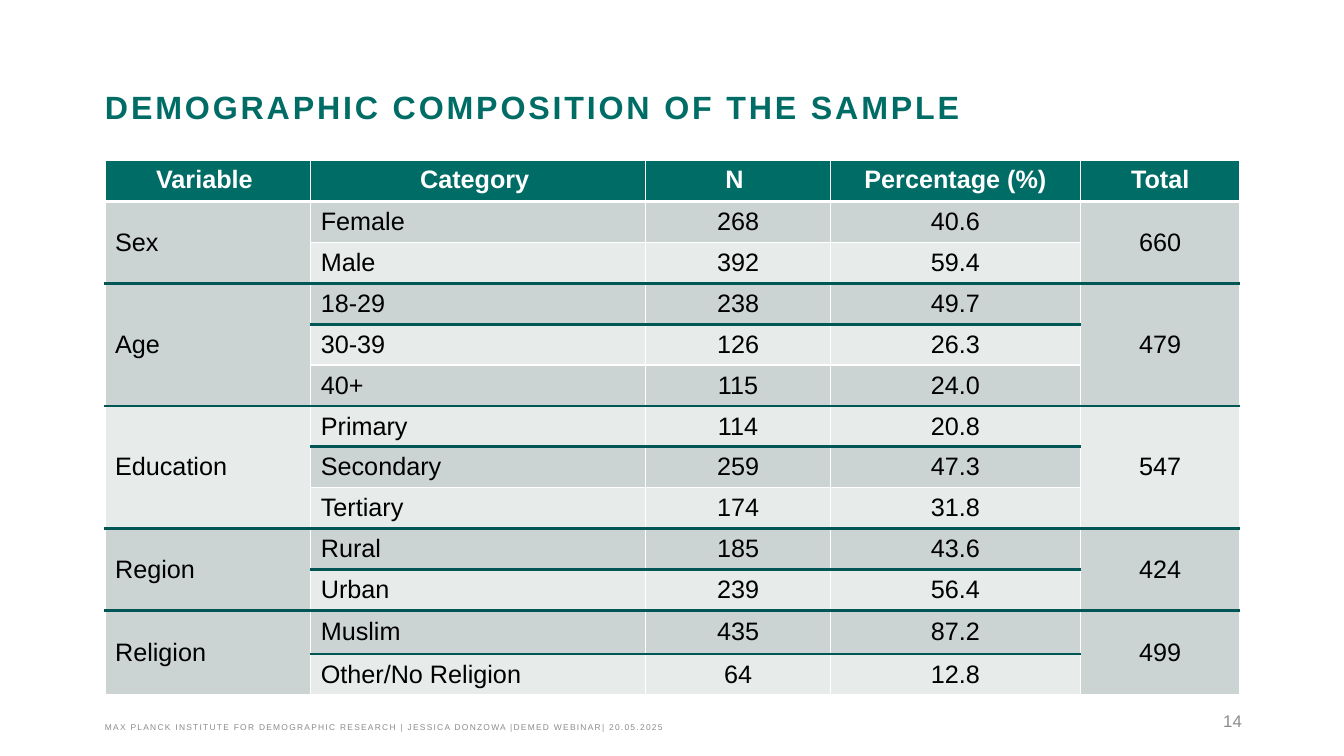
from dataclasses import dataclass

from lxml.etree import SubElement
from pptx import Presentation
from pptx.dml.color import RGBColor
from pptx.enum.text import MSO_ANCHOR as Anchor, PP_ALIGN as Align
from pptx.oxml.ns import qn
from pptx.slide import Slide
from pptx.table import Table, _Cell as Cell
from pptx.text.text import TextFrame
from pptx.util import Pt

GREEN = RGBColor(0x00, 0x6C, 0x66)
RULE_GREEN = RGBColor(0x00, 0x55, 0x55)
DARK_BAND = RGBColor(0xCC, 0xD4, 0xD3)
LIGHT_BAND = RGBColor(0xE7, 0xEB, 0xEA)
GREY = RGBColor(0x8C, 0x8C, 0x8C)
WHITE = RGBColor(0xFF, 0xFF, 0xFF)
BLACK = RGBColor(0x00, 0x00, 0x00)

LEFT, WIDTH = 75, 810.7
TABLE_TOP = 114.75
COLUMN_WIDTHS = (147, 239.2, 132, 178.7, 113.8)
ROW_HEIGHTS = (29.2,) * 11 + (31.2, 29.2)


@dataclass(frozen=True)
class Style:
    size: float
    color: RGBColor
    bold: bool = False
    spacing: float = 0
    align: Align = Align.LEFT


@dataclass(frozen=True)
class Border:
    color: RGBColor
    width: float


@dataclass(frozen=True)
class Variable:
    name: str
    categories: tuple[tuple[str, str, str], ...]
    total: str
    first_rule: bool = True


THIN = Border(WHITE, 1)
HEADER_RULE = Border(WHITE, 3)
GROUP_RULE = Border(RULE_GREEN, 2.25)

TITLE = Style(23, GREEN, bold=True, spacing=2)
HEADER = Style(18, WHITE, bold=True, align=Align.CENTER)
LABEL = Style(18, BLACK)
NUMBER = Style(18, BLACK, align=Align.CENTER)
FOOTER = Style(6, GREY, spacing=0.9)
PAGE = Style(12, GREY, align=Align.RIGHT)

HEADINGS = ("Variable ", "Category ", "N ", "Percentage (%)", "Total")
VARIABLES = (
    Variable("Sex", (("Female", "268", "40.6"), ("Male", "392", "59.4")), "660", first_rule=False),
    Variable("Age", (("18-29", "238", "49.7"), ("30-39", "126", "26.3"), ("40+", "115", "24.0")), "479"),
    Variable(
        "Education",
        (("Primary", "114", "20.8"), ("Secondary", "259", "47.3"), ("Tertiary", "174", "31.8")),
        "547",
    ),
    Variable("Region", (("Rural", "185", "43.6"), ("Urban", "239", "56.4")), "424"),
    Variable("Religion", (("Muslim", "435", "87.2"), ("Other/No Religion", "64", "12.8")), "499"),
)


def write(frame: TextFrame, text: str, style: Style) -> None:
    paragraph = frame.paragraphs[0]
    paragraph.alignment = style.align
    run = paragraph.add_run()
    run.text = text
    run.font.name = "Arial"
    run.font.size = Pt(style.size)
    run.font.bold = style.bold
    run.font.color.rgb = style.color
    if style.spacing:
        run._r.get_or_add_rPr().set("spc", str(round(style.spacing * 100)))


def add_text(
    slide: Slide, box: tuple[float, ...], text: str, style: Style, anchor: Anchor, inset: bool = False
) -> TextFrame:
    frame = slide.shapes.add_textbox(*map(Pt, box)).text_frame
    frame.word_wrap = True
    frame.vertical_anchor = anchor
    if not inset:
        frame.margin_left = frame.margin_right = frame.margin_top = frame.margin_bottom = 0
    write(frame, text, style)
    return frame


def paint(cell: Cell, fill: RGBColor, top: Border, bottom: Border) -> None:
    """Fill the cell and draw its four borders, thin white at the sides."""
    cell.fill.solid()
    cell.fill.fore_color.rgb = fill
    properties = cell._tc.get_or_add_tcPr()
    borders = (("a:lnL", THIN), ("a:lnR", THIN), ("a:lnT", top), ("a:lnB", bottom))
    for position, (tag, border) in enumerate(borders):
        line = SubElement(properties, qn(tag), w=str(int(Pt(border.width))))
        SubElement(SubElement(line, qn("a:solidFill")), qn("a:srgbClr"), val=str(border.color))
        properties.insert(position, line)


def fill_variable(table: Table, first: int, variable: Variable) -> int:
    """Write one variable's rows and return the row after them."""
    last = first + len(variable.categories) - 1
    group_top = HEADER_RULE if first == 1 else GROUP_RULE
    group_bottom = THIN if last == len(ROW_HEIGHTS) - 1 else GROUP_RULE
    first_rule = GROUP_RULE if variable.first_rule else THIN

    for row, values in enumerate(variable.categories, first):
        band = DARK_BAND if row % 2 else LIGHT_BAND
        top = group_top if row == first else first_rule if row == first + 1 else THIN
        bottom = group_bottom if row == last else first_rule if row == first else THIN
        for column, value in enumerate(values, 1):
            cell = table.cell(row, column)
            cell.vertical_anchor = Anchor.MIDDLE
            paint(cell, band, top, bottom)
            write(cell.text_frame, value, LABEL if column == 1 else NUMBER)

    band = DARK_BAND if first % 2 else LIGHT_BAND
    for column, text, style in ((0, variable.name, LABEL), (4, variable.total, NUMBER)):
        for row in range(first, last + 1):
            paint(table.cell(row, column), band, group_top if row == first else THIN, group_bottom)
        merged = table.cell(first, column)
        merged.merge(table.cell(last, column))
        merged.vertical_anchor = Anchor.MIDDLE
        write(merged.text_frame, text, style)
    return last + 1


def add_composition(slide: Slide) -> None:
    table = slide.shapes.add_table(
        len(ROW_HEIGHTS), len(COLUMN_WIDTHS), Pt(LEFT), Pt(TABLE_TOP), Pt(WIDTH), Pt(sum(ROW_HEIGHTS))
    ).table
    for column, width in zip(table.columns, COLUMN_WIDTHS):
        column.width = Pt(width)
    for row, height in zip(table.rows, ROW_HEIGHTS):
        row.height = Pt(height)
    for column, heading in enumerate(HEADINGS):
        cell = table.cell(0, column)
        paint(cell, GREEN, THIN, HEADER_RULE)
        write(cell.text_frame, heading, HEADER)
    next_row = 1
    for variable in VARIABLES:
        next_row = fill_variable(table, next_row, variable)


def main() -> None:
    deck = Presentation()
    deck.slide_width, deck.slide_height = Pt(960), Pt(540)
    slide = deck.slides.add_slide(deck.slide_layouts[6])

    title = add_text(
        slide, (LEFT, 64, WIDTH, 101), "DEMOGRAPHIC COMPOSITION OF THE SAMPLE", TITLE, Anchor.TOP
    )
    title.paragraphs[0].line_spacing = Pt(26)
    title.paragraphs[0].space_after = Pt(18)

    add_composition(slide)
    add_text(
        slide,
        (LEFT, 508.3, WIDTH, 14.4),
        "MAX PLANCK INSTITUTE FOR DEMOGRAPHIC RESEARCH | JESSICA DONZOWA |DEMED WEBINAR| 20.05.2025",
        FOOTER,
        Anchor.BOTTOM,
    )
    add_text(slide, (678.2, 500.4, 216, 28.8), "14", PAGE, Anchor.MIDDLE, inset=True)
    deck.save("out.pptx")


if __name__ == "__main__":
    main()
